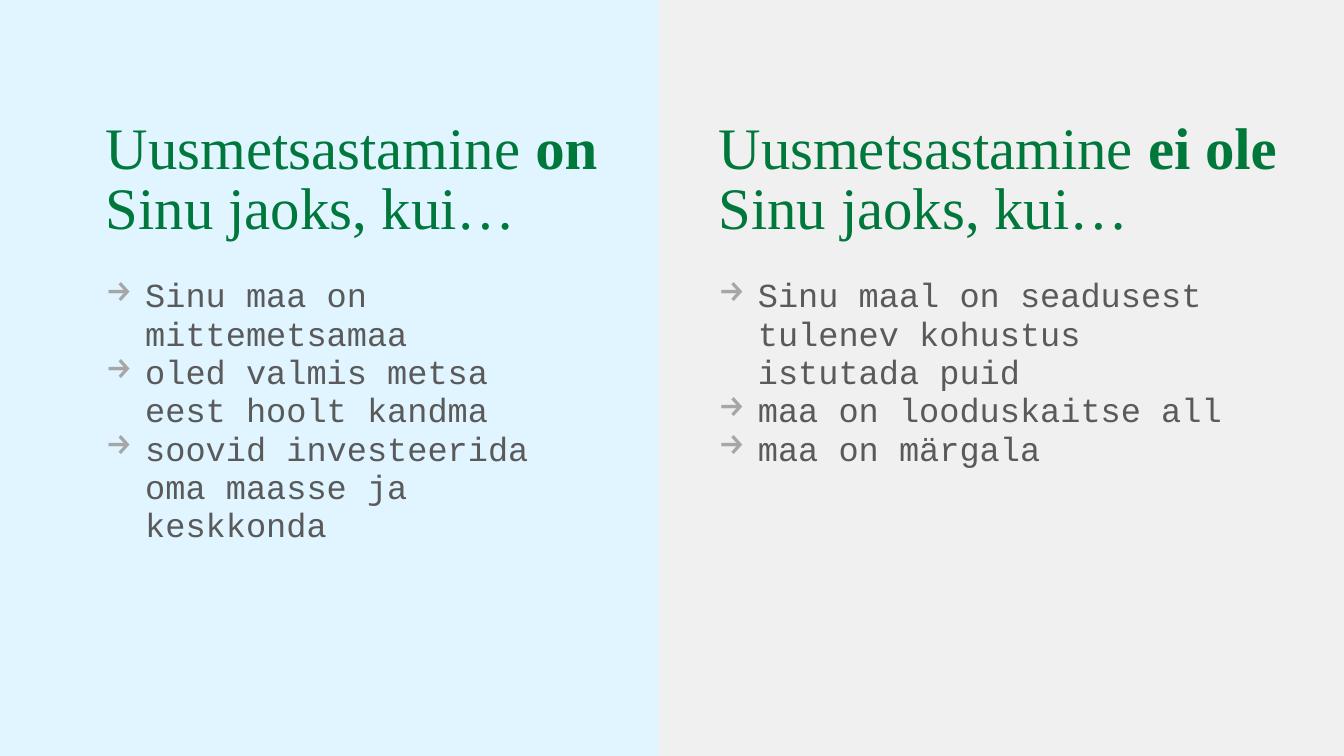
"""Build a two-panel slide on when afforestation is and is not for you."""
import pptx
import pptx.dml.color
import pptx.enum.shapes
import pptx.oxml
import pptx.oxml.ns
import pptx.util

Cm = pptx.util.Cm
Pt = pptx.util.Pt
COLORS = {"green": "00783C", "text": "5A5A5A", "arrow": "A6A6A6", "blue": "E0F5FF", "grey": "F0F0F0"}
PANEL_WIDTH = 17.27
INDENT = Cm(0.99)

panels = [
    {"left": 0, "text_left": 2.67, "body_width": 11.89, "fill": "blue", "verb": "on",
     "points": ["Sinu maa on mittemetsamaa",
                "oled valmis metsa eest hoolt kandma",
                "soovid investeerida oma maasse ja keskkonda"]},
    {"left": 16.6, "text_left": 18.11, "body_width": 13.08, "fill": "grey", "verb": "ei ole",
     "points": ["Sinu maal on seadusest tulenev kohustus istutada puid",
                "maa on looduskaitse all",
                "maa on märgala"]},
]


def add_text_frame(left, top, width, height):
    tf = slide.shapes.add_textbox(Cm(left), Cm(top), Cm(width), Cm(height)).text_frame
    tf.word_wrap = True
    tf.margin_left = tf.margin_right = tf.margin_top = tf.margin_bottom = 0
    return tf


def style_font(font, name, size, color):
    font.name = name
    font.size = Pt(size)
    font.color.rgb = pptx.dml.color.RGBColor.from_string(COLORS[color])


prs = pptx.Presentation()
prs.slide_width = Cm(33.87)
prs.slide_height = Cm(19.05)
slide = prs.slides.add_slide(prs.slide_layouts[6])

for panel in panels:
    sp = slide.shapes.add_shape(pptx.enum.shapes.MSO_SHAPE.RECTANGLE,
                                Cm(panel["left"]), Cm(-0.18), Cm(PANEL_WIDTH), Cm(19.43))
    sp.shadow.inherit = False
    sp.fill.solid()
    sp.fill.fore_color.rgb = pptx.dml.color.RGBColor.from_string(COLORS[panel["fill"]])
    sp.line.fill.background()

for panel in panels:
    p = add_text_frame(panel["text_left"], 3.07, 14.25, 1.88).paragraphs[0]
    p.line_spacing = 0.85
    for text, bold in [("Uusmetsastamine ", False), (panel["verb"], True), (" Sinu jaoks, kui…", False)]:
        r = p.add_run()
        r.text = text
        r.font.bold = bold
        style_font(r.font, "Times New Roman", 42, "green")

    tf = add_text_frame(panel["text_left"], 6.99, panel["body_width"], 10.54)
    tf.text = "\n".join(panel["points"])
    for p in tf.paragraphs:
        p.line_spacing = 0.95
        pPr = p._p.get_or_add_pPr()
        pPr.set("marL", str(INDENT))
        pPr.set("indent", str(-INDENT))
        bullet_color = pptx.oxml.parse_xml(
            f'<a:buClr {pptx.oxml.ns.nsdecls("a")}><a:srgbClr val="{COLORS["arrow"]}"/></a:buClr>')
        bullet = pptx.oxml.parse_xml(f'<a:buChar {pptx.oxml.ns.nsdecls("a")} char="→"/>')
        pPr.extend([bullet_color, bullet])
        style_font(p.runs[0].font, "Courier New", 24, "text")

prs.save("out.pptx")
